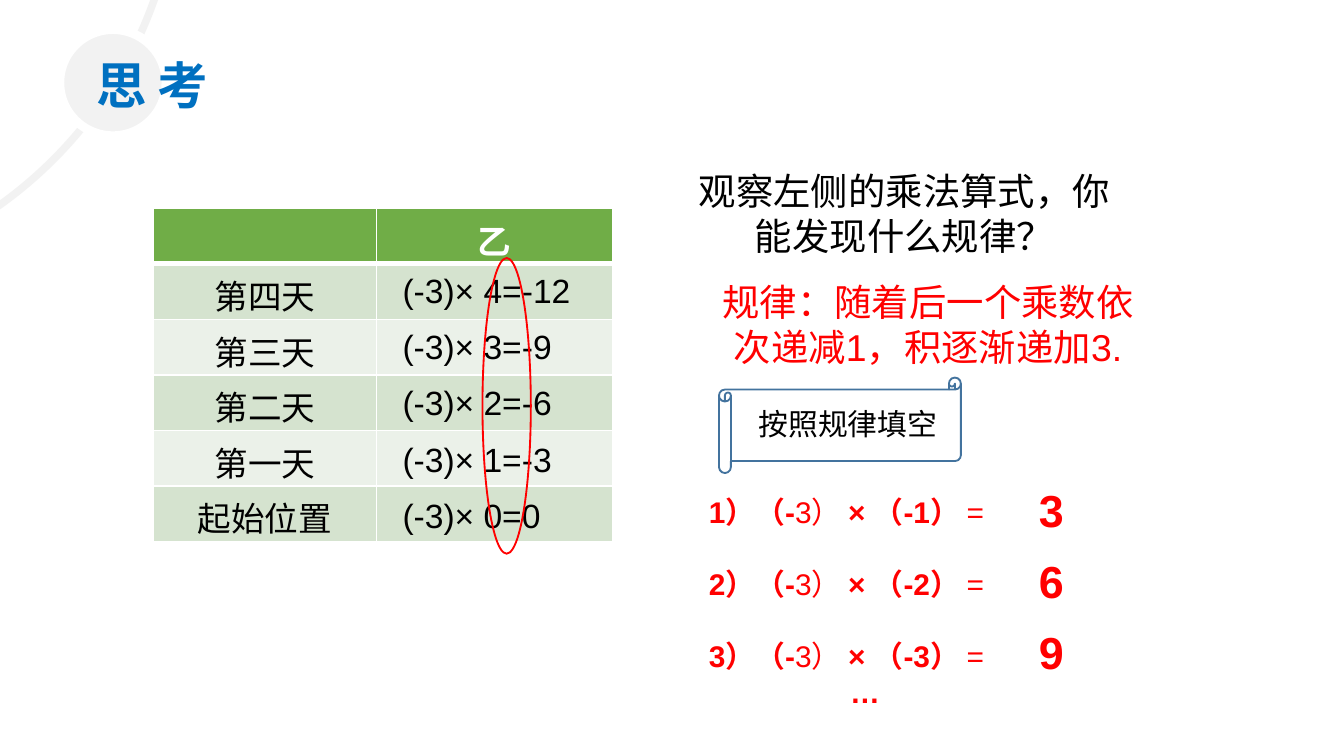
from lxml import etree
from pptx import Presentation
from pptx.dml.color import RGBColor
from pptx.enum.shapes import MSO_SHAPE
from pptx.enum.text import PP_ALIGN
from pptx.oxml.ns import qn
from pptx.util import Pt

PX = 4572
OVAL = MSO_SHAPE.OVAL
SCROLL = MSO_SHAPE.HORIZONTAL_SCROLL
LEFT, CENTER = PP_ALIGN.LEFT, PP_ALIGN.CENTER
COLORS = {
    "white": "FFFFFF", "black": "000000", "red": "FF0000", "blue": "0070C0",
    "gray": "F2F2F2", "green": "70AD47", "band": "D5E3CF",
    "light": "EBF1E9", "scroll": "43739E",
}
MARGINS = {"margin_left": 15 * PX, "margin_right": 15 * PX,
           "margin_top": 8 * PX, "margin_bottom": 8 * PX}
CELL_MARGINS = {**MARGINS, "margin_top": 10 * PX}
DAYS = ["第四天", "第三天", "第二天", "第一天", "起始位置"]
EQUATIONS = ["(-3)× 4=-12", "(-3)× 3=-9", "(-3)× 2=-6", "(-3)× 1=-3", "(-3)× 0=0"]
ANSWERS = ["3", "6", "9"]


def rgb(name):
    return RGBColor.from_string(COLORS[name])


def emu(*lengths):
    return [n * PX for n in lengths]


def set_values(target, values):
    for name, value in values.items():
        setattr(target, name, value)


def add_run(p, text, size, color, bold=False):
    r = p.add_run()
    r.text = text
    set_values(r.font, {"size": Pt(size), "bold": bold, "name": "Arial"})
    r.font.color.rgb = rgb(color)


def add_frame(s, x, y, w, h):
    tf = s.shapes.add_textbox(*emu(x, y, w, h)).text_frame
    set_values(tf, {**MARGINS, "word_wrap": True})
    return tf


def add_text(s, x, y, w, h, text, size, color="black", bold=False, align=LEFT):
    p = add_frame(s, x, y, w, h).paragraphs[0]
    p.alignment = align
    add_run(p, text, size, color, bold)


def add_outline(s, kind, x, y, w, h, line, width, fill=None):
    sp = s.shapes.add_shape(kind, *emu(x, y, w, h))
    sp.shadow.inherit = False
    if fill:
        sp.fill.solid()
        sp.fill.fore_color.rgb = rgb(fill)
    else:
        sp.fill.background()
    sp.line.color.rgb = rgb(line)
    sp.line.width = Pt(width)


def set_border(cell, side, width):
    tc_pr = cell._tc.get_or_add_tcPr()
    ln = etree.SubElement(tc_pr, qn(f"a:ln{side}"), w=str(Pt(width)))
    fill = etree.SubElement(ln, qn("a:solidFill"))
    etree.SubElement(fill, qn("a:srgbClr"), val=COLORS["white"])


def title(s, x, y):
    add_outline(s, OVAL, x - 1097, y - 894, 1274, 1274, "gray", 4)
    add_outline(s, OVAL, x, y, 158, 158, "white", 4.75, "gray")
    add_text(s, x + 39, y + 28, 570, 106, "思 考", 27, "blue", True)


def day_table(s, x, y, w, h):
    rows = [("", "乙")] + [(day, "") for day in DAYS]
    table = s.shapes.add_table(len(rows), 2, *emu(x, y, w, h)).table
    table.columns[0].width, table.columns[1].width = emu(332, w - 332)
    for i, row in enumerate(rows):
        header = i == 0
        fill = "green" if header else "band" if i % 2 else "light"
        for j, text in enumerate(row):
            cell = table.cell(i, j)
            set_values(cell, CELL_MARGINS)
            for side in "LRTB":
                thick = side == "B" and header or side == "T" and i == 1
                set_border(cell, side, 3 if thick else 1)
            cell.fill.solid()
            cell.fill.fore_color.rgb = rgb(fill)
            p = cell.text_frame.paragraphs[0]
            p.alignment = CENTER
            if text:
                add_run(p, text, 18, "white" if header else "black", header)
            else:
                p.font.size = Pt(18)
    for i, equation in enumerate(EQUATIONS):
        add_text(s, x + 356, y + 83 + 84 * i, 340, 76, equation, 18)


def rule(s, x, y, w):
    add_text(s, x, y, w, 150, "观察左侧的乘法算式，你能发现什么规律？", 20, align=CENTER)
    add_text(s, x + 35, y + 166, w, 150,
             "规律：随着后一个乘数依次递减1，积逐渐递加3.", 20, "red", align=CENTER)


def scroll(s, x, y, w, h):
    add_outline(s, SCROLL, x, y, w, h, "scroll", 1)
    add_text(s, x + 44, y + 34, 684, 68, "按照规律填空", 16)


def exercises(s, x, y, w, h):
    tf = add_frame(s, x, y, w, h)
    for n, answer in enumerate(ANSWERS, 1):
        p = tf.paragraphs[0] if n == 1 else tf.add_paragraph()
        p.space_after = Pt(19.3 if n < len(ANSWERS) else 0)
        parts = [(f"{n}）（-", True), ("3）", False),
                 (f" × （-{n}） ", True), ("=", False)]
        for text, bold in parts:
            add_run(p, text, 16, "red", bold)
        add_text(s, x + 491, y - 17 + 106 * (n - 1), 138, 96, answer, 24, "red", True)
    p = tf.add_paragraph()
    p._p.get_or_add_pPr().set("marL", str(210 * PX))
    add_run(p, "…", 16, "red", True)


def main():
    prs = Presentation()
    prs.slide_width, prs.slide_height = emu(2000, 1125)
    s = prs.slides.add_slide(prs.slide_layouts[6])
    title(s, 89, 44)
    day_table(s, 228, 310, 684, 496)
    rule(s, 1004, 242, 684)
    add_outline(s, OVAL, 718, 384, 72, 440, "red", 1)
    scroll(s, 1070, 562, 360, 142)
    exercises(s, 1040, 727, 1016, 338)
    prs.save("out.pptx")


if __name__ == "__main__":
    main()
